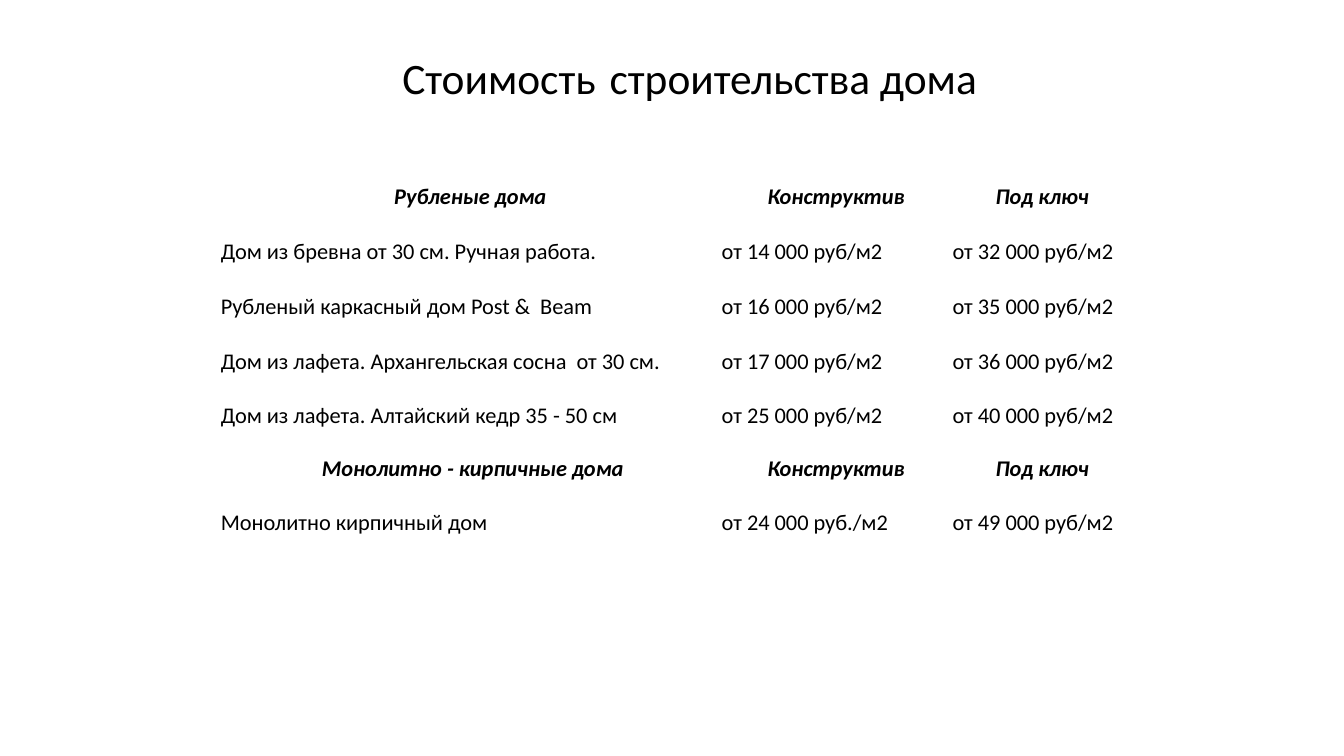
"""Build a one-slide price list for house construction."""
from dataclasses import dataclass

from pptx import Presentation
from pptx.dml.color import RGBColor
from pptx.enum.text import MSO_ANCHOR as Anchor, MSO_AUTO_SIZE as AutoSize, PP_ALIGN as Align
from pptx.util import Pt


@dataclass(frozen=True)
class Theme:
    font: str = "Calibri"
    ink: str = "000000"
    title_size: float = 31
    title_gap_size: float = 44
    table_size: float = 16


class PriceSlide:
    def __init__(self, deck, theme):
        self.theme = theme
        self.slide = deck.slides.add_slide(deck.slide_layouts[5])

    def apply(self, target, **values):
        for name, value in values.items():
            setattr(target, name, value)

    def add_words(self, paragraph, words, size, bold=False, italic=False):
        run = paragraph.add_run()
        run.text = words
        self.apply(run.font, name=self.theme.font, size=Pt(size), bold=bold, italic=italic)
        run.font.color.rgb = RGBColor.from_string(self.theme.ink)

    def title(self, pieces, left, top, width, height):
        heading = self.slide.shapes.title
        self.apply(heading, left=Pt(left), top=Pt(top), width=Pt(width), height=Pt(height))
        self.apply(heading.text_frame, vertical_anchor=Anchor.MIDDLE, word_wrap=True,
                   auto_size=AutoSize.NONE)
        line = heading.text_frame.paragraphs[0]
        self.apply(line, alignment=Align.CENTER, line_spacing=0.9)
        for words, size in pieces:
            self.add_words(line, words, size)

    def cell(self, cell, words, is_header):
        self.apply(cell, vertical_anchor=Anchor.BOTTOM, margin_left=Pt(0.75),
                   margin_right=Pt(0.75), margin_top=Pt(0.75), margin_bottom=Pt(0))
        cell.fill.background()
        line = cell.text_frame.paragraphs[0]
        line.alignment = Align.CENTER if is_header else Align.LEFT
        self.add_words(line, words, self.theme.table_size, is_header, is_header)

    def table(self, rows, header_rows, left, top, widths, heights):
        frame = self.slide.shapes.add_table(
            len(rows), len(widths), Pt(left), Pt(top), Pt(sum(widths)), Pt(sum(heights)))
        prices = frame.table
        self.apply(prices, first_row=False, horz_banding=False)
        for column, width in zip(prices.columns, widths):
            column.width = Pt(width)
        for index, (row, height, entries) in enumerate(zip(prices.rows, heights, rows)):
            row.height = Pt(height)
            for cell, words in zip(row.cells, entries):
                self.cell(cell, words, index in header_rows)


def main():
    theme = Theme()
    deck = Presentation()
    deck.slide_width, deck.slide_height = Pt(960), Pt(540)
    page = PriceSlide(deck, theme)
    page.title(
        [("Стоимость", theme.title_size), (" ", theme.title_gap_size),
         ("строительства дома", theme.title_size)],
        left=168.5, top=15.1, width=648, height=75.6)

    price_heads = ("Конструктив", "Под ключ")
    rows = [
        ("Рубленые дома", *price_heads),
        ("Дом из бревна от 30 см. Ручная работа.", "от 14 000 руб/м2", "от 32 000 руб/м2"),
        ("Рубленый каркасный дом Post &  Beam", "от 16 000 руб/м2", "от 35 000 руб/м2"),
        ("Дом из лафета. Архангельская сосна  от 30 см.", "от 17 000 руб/м2", "от 36 000 руб/м2"),
        ("Дом из лафета. Алтайский кедр 35 - 50 см", "от 25 000 руб/м2", "от 40 000 руб/м2"),
        (" Монолитно - кирпичные дома", *price_heads),
        ("Монолитно кирпичный дом", "от 24 000 руб./м2", "от 49 000 руб/м2"),
    ]
    second_header = 5
    heights = [37.4 if index == second_header else 39.1 for index in range(len(rows))]
    page.table(rows, {0, second_header}, left=157, top=111.6,
               widths=[357.8, 164.9, 129.6], heights=heights)
    deck.save("out.pptx")


if __name__ == "__main__":
    main()
